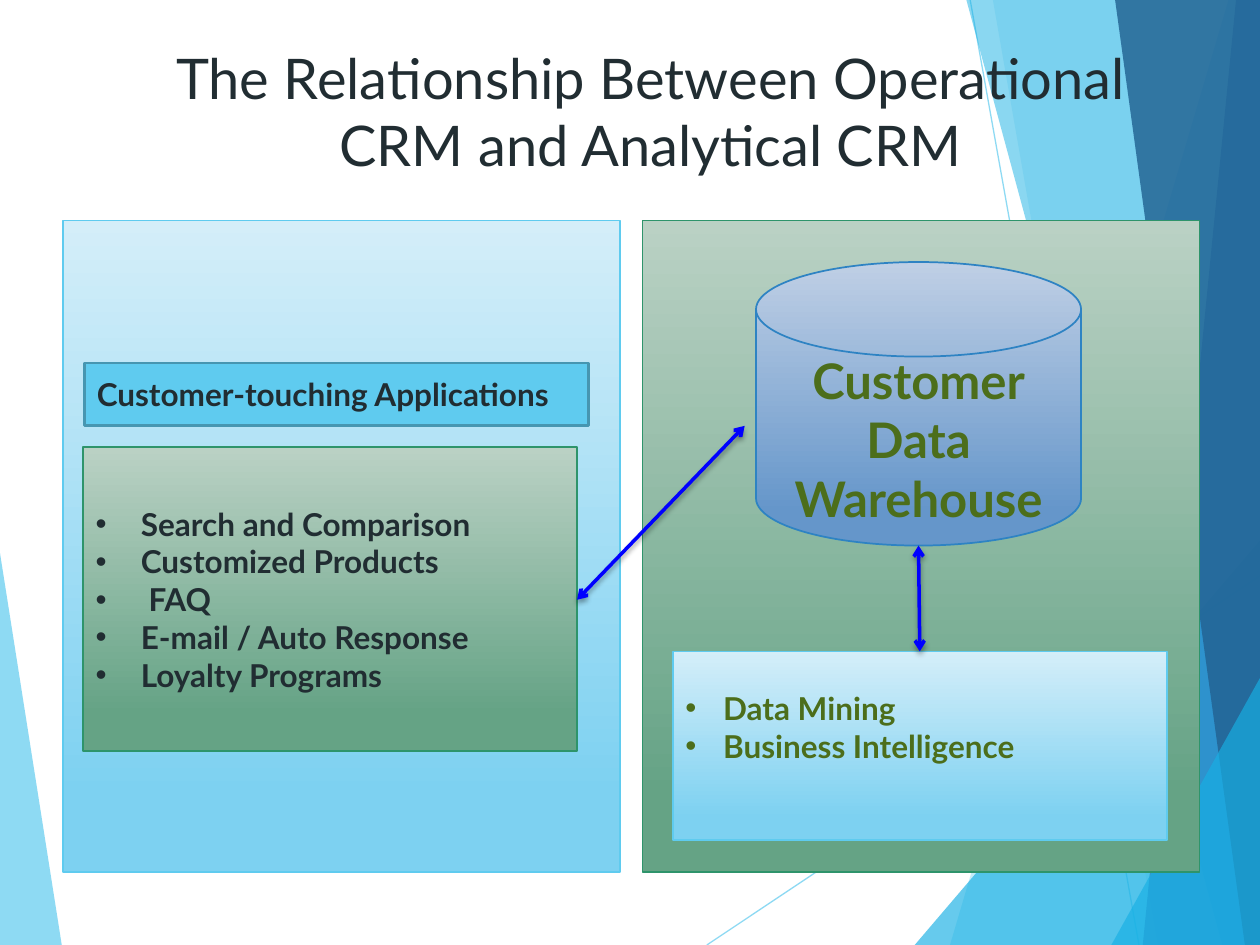
"""Build the slide relating operational CRM to analytical CRM."""
from dataclasses import dataclass

from lxml.etree import SubElement
from pptx import Presentation
from pptx.dml.color import RGBColor as Rgb
from pptx.enum.shapes import MSO_CONNECTOR as Link, MSO_SHAPE as Preset
from pptx.enum.text import MSO_ANCHOR as Anchor, MSO_AUTO_SIZE as Fit, PP_ALIGN as Align
from pptx.oxml.ns import qn
from pptx.util import Pt

PX = 9144


@dataclass(frozen=True)
class Theme:
    font: str = "Lato"
    title_size: int = 32
    store_size: int = 28
    body_size: int = 18
    dark: str = "212D32"
    olive: str = "4C6E1B"
    sky: str = "5FCBEF"
    sky_edge: str = "4696B1"
    cyan: str = "17B0E4"
    blue: str = "2E83C3"
    navy: str = "226292"
    green: str = "2E946B"
    arrow: str = "0000FF"
    shadow: str = "000000"
    sky_fade: tuple = ("D4EEF9", "7DD1F1")
    green_fade: tuple = ("BAD1C4", "65A385")
    blue_fade: tuple = ("BFCFE5", "6596CA")


theme = Theme()


def add_block(preset, box, colours, edge, edge_width=1):
    block = slide.shapes.add_shape(preset, *(v * PX for v in box))
    block.shadow.inherit = False
    if len(colours) == 1:
        block.fill.solid()
        block.fill.fore_color.rgb = Rgb.from_string(colours[0])
    else:
        block.fill.gradient()
        block.fill.gradient_angle = 270
        for stop, colour, position in zip(block.fill.gradient_stops, colours, (0, 0.88)):
            stop.color.rgb = Rgb.from_string(colour)
            stop.position = position
    block.line.color.rgb = Rgb.from_string(edge)
    block.line.width = Pt(edge_width)
    return block


def write(block, lines, size, colour, bold=True, align=Align.LEFT, hang=0):
    frame = block.text_frame
    frame.word_wrap = True
    frame.auto_size = Fit.NONE
    frame.vertical_anchor = Anchor.MIDDLE
    frame.text = "\n".join(lines)
    for paragraph in frame.paragraphs:
        paragraph.alignment = align
        if hang:
            props = paragraph._p.get_or_add_pPr()
            props.set("marL", str(hang * PX))
            props.set("indent", str(-hang * PX))
            SubElement(props, qn("a:buFont"), typeface="Arial")
            SubElement(props, qn("a:buChar"), char="•")
        paragraph.font.name = theme.font
        paragraph.font.size = Pt(size)
        paragraph.font.bold = bold
        paragraph.font.color.rgb = Rgb.from_string(colour)


deck = Presentation()
deck.slide_width, deck.slide_height = 1000 * PX, 750 * PX
slide = deck.slides.add_slide(deck.slide_layouts[5])

for ends in ((561, 750, 1000, 457), (770, 0, 904, 750)):
    ray = slide.shapes.add_connector(Link.STRAIGHT, *(v * PX for v in ends))
    ray.line.color.rgb = Rgb.from_string(theme.sky)
    ray.line.width = Pt(0.75)
    SubElement(next(ray._element.iter(qn("a:srgbClr"))), qn("a:alpha"), val="70000")
    SubElement(ray._element.spPr, qn("a:effectLst"))

facets = (
    (theme.sky, 70, ((0, 439), (49, 750), (0, 750))),
    (theme.sky, 36, ((975, 0), (754, 750), (1000, 750), (1000, 0))),
    (theme.sky, 20, ((788, 0), (919, 750), (1000, 750), (1000, 0))),
    (theme.cyan, 66, ((726, 750), (1000, 429), (1000, 750))),
    (theme.cyan, 50, ((767, 0), (970, 750), (1000, 750), (1000, 0))),
    (theme.blue, 70, ((981, 0), (907, 750), (1000, 750), (1000, 0))),
    (theme.navy, 82, ((885, 0), (988, 750), (1000, 750), (1000, 0))),
    (theme.cyan, 66, ((882, 750), (1000, 538), (1000, 750))),
)
for colour, opacity, corners in facets:
    outline = slide.shapes.build_freeform(*corners[0], scale=PX)
    outline.add_line_segments(corners[1:], close=True)
    facet = outline.convert_to_shape()
    facet.shadow.inherit = False
    facet.line.fill.background()
    facet.fill.solid()
    facet.fill.fore_color.rgb = Rgb.from_string(colour)
    SubElement(next(facet._element.iter(qn("a:srgbClr"))), qn("a:alpha"), val=str(opacity * 1000))

add_block(Preset.RECTANGLE, (510, 175, 442, 517), theme.green_fade, theme.green)
add_block(Preset.RECTANGLE, (50, 175, 442, 517), theme.sky_fade, theme.sky)

title = slide.shapes.title
title.left, title.top, title.width, title.height = (v * PX for v in (75, 25, 883, 125))
write(title, ["The Relationship Between Operational\vCRM and Analytical CRM"],
      theme.title_size, theme.dark, bold=False, align=Align.CENTER)
slide.shapes._spTree.append(title._element)

applications = add_block(Preset.RECTANGLE, (66, 355, 392, 241), theme.green_fade, theme.green)
write(applications, ["Search and Comparison", "Customized Products", " FAQ",
                     "E-mail / Auto Response", "Loyalty Programs"],
      theme.body_size, theme.dark, hang=36)

heading = add_block(Preset.RECTANGLE, (67, 288, 400, 50), (theme.sky,), theme.sky_edge, 1.5)
write(heading, ["Customer-touching Applications"], theme.body_size, theme.dark)

analysis = add_block(Preset.RECTANGLE, (534, 517, 392, 150), theme.sky_fade, theme.sky)
write(analysis, ["Data Mining", "Business Intelligence"], theme.body_size, theme.olive, hang=30)
analysis.text_frame.margin_bottom = 35 * PX

warehouse = add_block(Preset.FLOWCHART_MAGNETIC_DISK, (600, 208, 258, 225),
                      theme.blue_fade, theme.blue)
write(warehouse, ["Customer", "Data", "Warehouse"], theme.store_size, theme.olive,
      align=Align.CENTER)
warehouse.text_frame.margin_top = 23 * PX

for ends in ((729, 433, 730, 517), (458, 476, 591, 338)):
    flow = slide.shapes.add_connector(Link.STRAIGHT, *(v * PX for v in ends))
    flow.line.color.rgb = Rgb.from_string(theme.arrow)
    flow.line.width = Pt(2)
    stroke = next(flow._element.iter(qn("a:ln")))
    for tip in ("a:headEnd", "a:tailEnd"):
        SubElement(stroke, qn(tip), type="arrow")
    effects = SubElement(flow._element.spPr, qn("a:effectLst"))
    shadow = SubElement(effects, qn("a:outerShdw"), blurRad=str(Pt(3)), dist=str(Pt(2)),
                        dir="5400000", rotWithShape="0")
    shade = SubElement(shadow, qn("a:srgbClr"), val=theme.shadow)
    SubElement(shade, qn("a:alpha"), val="35000")

deck.save("out.pptx")
